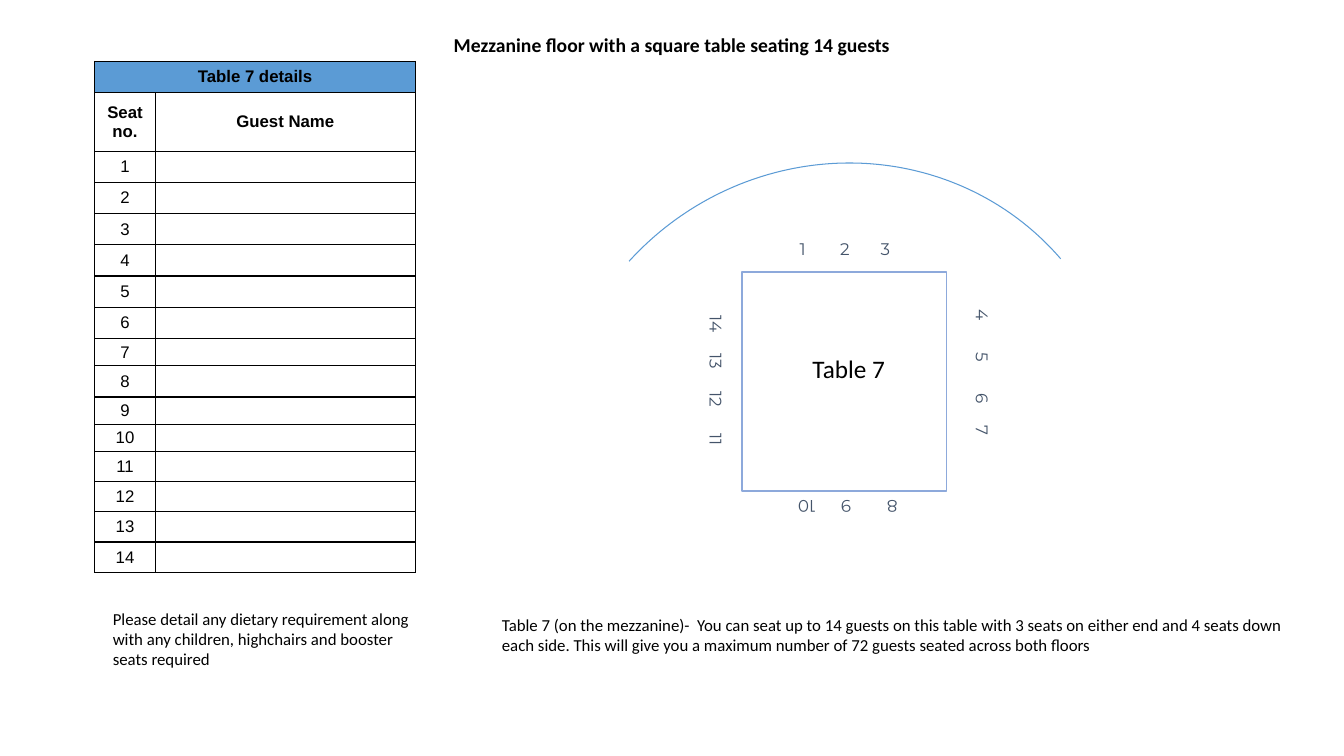
import pptx
import pptx.util
import pptx.dml.color
import pptx.enum.shapes
import pptx.enum.text
import pptx.oxml
import pptx.oxml.ns
import lxml.etree

Inches = pptx.util.Inches
Pt = pptx.util.Pt
SHAPE = pptx.enum.shapes.MSO_SHAPE
ALIGN = pptx.enum.text.PP_ALIGN
ANCHOR = pptx.enum.text.MSO_ANCHOR
qn = pptx.oxml.ns.qn

COLORS = {"black": "000000", "white": "FFFFFF", "blue": "5B9BD5",
          "edge": "8DA9DB", "seat": "44546A"}

TITLE = ("Mezzanine floor with a square table seating 14 guests", (4.4, 0.28, 4.95, 0.34))
NOTES = [
    ("Please detail any dietary requirement along with any children, "
     "highchairs and booster seats required", (1.02, 5.99, 3.18, 0.94)),
    ("Table 7 (on the mezzanine)-\u00a0 You can seat up to 14 guests on this table "
     "with 3 seats on either end and 4 seats down each side. This will give you a "
     "maximum number of 72 guests seated across both floors", (4.88, 6.05, 7.97, 0.5)),
]
NOTES = [(text.replace("\u00a0", " "), box) for text, box in NOTES]
SEAT_SIDES = [
    ((8, 9, 10), (7.19, 4.89, 2.34, 0.29), 180, (0.68, 1.14, 1.53)),
    ((14, 13, 12, 11), (6.08, 3.56, 2.05, 0.46), 90, (0.45, 0.82, 1.2, 1.6)),
    ((4, 5, 6, 7), (8.59, 3.5, 2.31, 0.57), 90, (0.5, 0.91, 1.32, 1.64)),
    ((1, 2, 3), (7.19, 2.32, 2.34, 0.29), 0, (0.77, 1.19, 1.59)),
]
GUEST_ROWS = [("Table 7 details", ""), ("Seat no.", "Guest Name")]
GUEST_ROWS += [(str(seat), "") for seat in range(1, 15)]
COL_WIDTHS = [0.6, 2.58]
ROW_HEIGHTS = [0.31, 0.58] + [0.31] * 6 + [0.27, 0.31, 0.27, 0.27] + [0.3] * 4


def rgb(name):
    return pptx.dml.color.RGBColor.from_string(COLORS[name])


def inches(box):
    return [Inches(v) for v in box]


def write(tf, text, size=12, font="Calibri", color="black", bold=False,
          align=ALIGN.LEFT, anchor=ANCHOR.TOP, margins=(0.1, 0.05)):
    tf.word_wrap = True
    tf.vertical_anchor = anchor
    tf.margin_left = tf.margin_right = Inches(margins[0])
    tf.margin_top = tf.margin_bottom = Inches(margins[1])
    p = tf.paragraphs[0]
    p.alignment = align
    r = p.add_run()
    r.text = text
    r.font.size = Pt(size)
    r.font.name = font
    r.font.bold = bold
    r.font.color.rgb = rgb(color)
    return p


def add_shape(s, kind, box, rotation=0, fill=None, line=None, width=1):
    sp = s.shapes.add_shape(kind, *inches(box))
    sp.shadow.inherit = False
    sp.rotation = rotation
    if fill:
        sp.fill.solid()
        sp.fill.fore_color.rgb = rgb(fill)
    else:
        sp.fill.background()
    if line:
        sp.line.color.rgb = rgb(line)
        sp.line.width = Pt(width)
    else:
        sp.line.fill.background()
    return sp


def add_text(s, text, box, **style):
    write(s.shapes.add_textbox(*inches(box)).text_frame, text, **style)


def add_seats(s, seats, box, rotation, stops):
    sp = add_shape(s, SHAPE.RECTANGLE, box, rotation, fill="white")
    p = write(sp.text_frame, "".join(f"\t{seat}" for seat in seats), font="Montserrat",
              color="seat", anchor=ANCHOR.MIDDLE, margins=(0, 0))
    tabs = lxml.etree.SubElement(p._p.get_or_add_pPr(), qn("a:tabLst"))
    for stop in stops:
        lxml.etree.SubElement(tabs, qn("a:tab"), pos=str(Inches(stop)), algn="ctr")


def add_borders(cell):
    tc_pr = cell._tc.get_or_add_tcPr()
    for side in ("a:lnL", "a:lnR", "a:lnT", "a:lnB"):
        ln = lxml.etree.SubElement(tc_pr, qn(side), w=str(Pt(1)))
        fill = lxml.etree.SubElement(ln, qn("a:solidFill"))
        lxml.etree.SubElement(fill, qn("a:srgbClr"), val=COLORS["black"])


def add_guest_table(s):
    box = (0.94, 0.61, sum(COL_WIDTHS), sum(ROW_HEIGHTS))
    table = s.shapes.add_table(len(ROW_HEIGHTS), len(COL_WIDTHS), *inches(box)).table
    table.first_row = table.horz_banding = False
    for column, width in zip(table.columns, COL_WIDTHS):
        column.width = Inches(width)
    for row, height in zip(table.rows, ROW_HEIGHTS):
        row.height = Inches(height)
    table.cell(0, 0).merge(table.cell(0, 1))
    for i, row in enumerate(GUEST_ROWS):
        for j, text in enumerate(row):
            cell = table.cell(i, j)
            cell.margin_left = cell.margin_right = 0
            cell.margin_top = cell.margin_bottom = 0
            cell.vertical_anchor = ANCHOR.MIDDLE
            add_borders(cell)
            if i == 0:
                cell.fill.solid()
                cell.fill.fore_color.rgb = rgb("blue")
            else:
                cell.fill.background()
            p = cell.text_frame.paragraphs[0]
            if text:
                p.alignment = ALIGN.CENTER
                r = p.add_run()
                r.text = text
                r.font.size = Pt(12)
                r.font.name = "Arial"
                r.font.bold = i < 2
                r.font.color.rgb = rgb("black")
            else:
                lxml.etree.SubElement(p._p, qn("a:endParaRPr"), sz="1200")


def main():
    prs = pptx.Presentation()
    prs.slide_width, prs.slide_height = Inches(13.33), Inches(7.5)
    s = prs.slides.add_slide(prs.slide_layouts[5])

    text, box = TITLE
    title = s.shapes.title
    title.left, title.top, title.width, title.height = inches(box)
    write(title.text_frame, text, size=14, bold=True)

    arc = add_shape(s, SHAPE.ARC, (5.43, 1.66, 5.79, 5.59), 319.3, line="blue", width=0.75)
    arc.adjustments[0] = 157.49
    arc.adjustments[1] = 0
    add_shape(s, SHAPE.RECTANGLE, (7.29, 2.77, 2.17, 2.03), 90, line="edge")
    for side in SEAT_SIDES:
        add_seats(s, *side)
    add_text(s, "Table 7", (7.96, 3.46, 1.09, 0.4), size=18)

    add_guest_table(s)
    for text, box in NOTES:
        add_text(s, text, box)
    prs.save("out.pptx")


if __name__ == "__main__":
    main()
